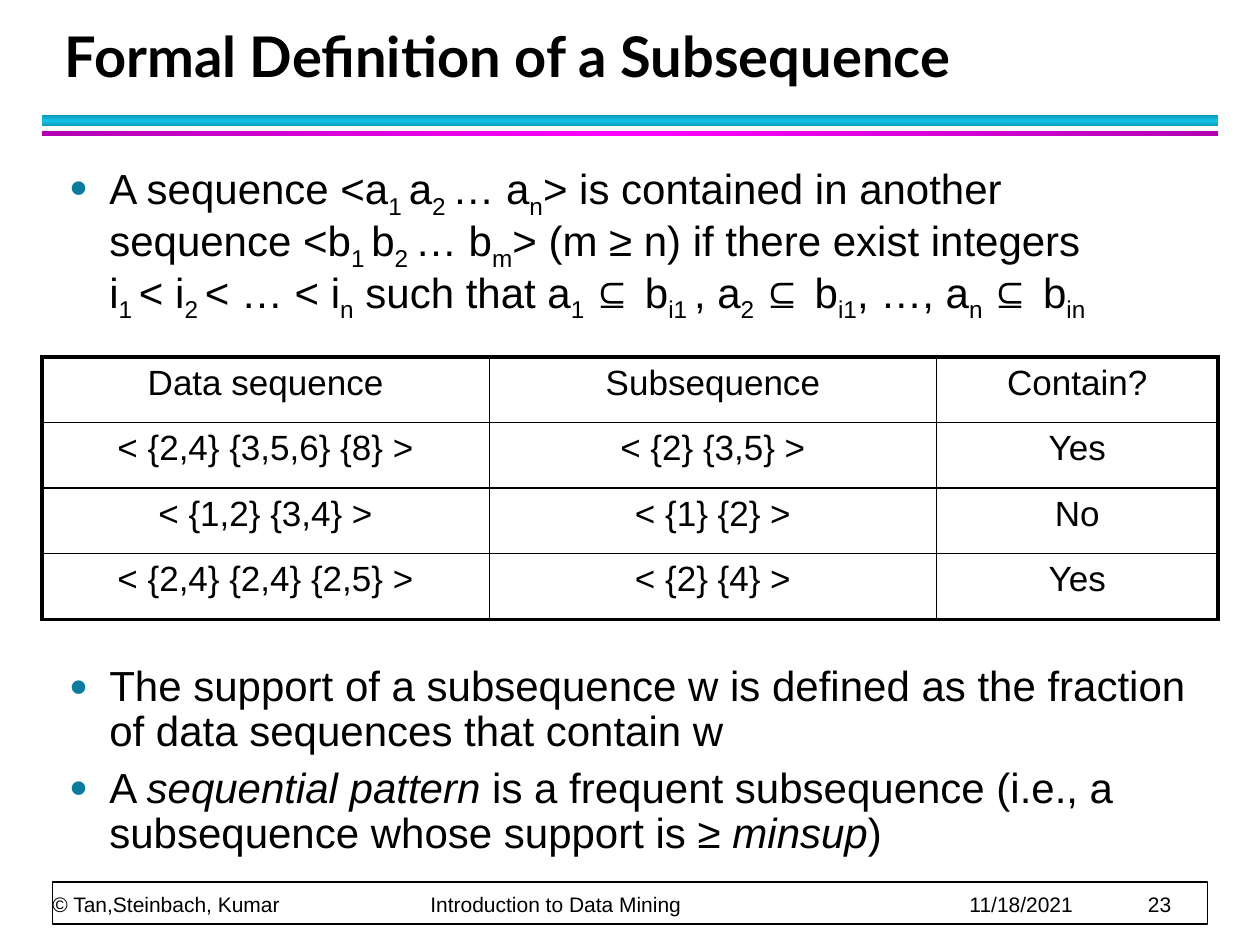
"""Build the slide on the formal definition of a subsequence."""
from copy import deepcopy
from dataclasses import dataclass

from lxml.etree import SubElement
from pptx import Presentation
from pptx.dml.color import RGBColor
from pptx.enum.shapes import MSO_SHAPE
from pptx.enum.text import MSO_ANCHOR, PP_ALIGN
from pptx.oxml.ns import qn
from pptx.util import Pt

BLACK = RGBColor(0, 0, 0)
WHITE = RGBColor(255, 255, 255)
BULLET_TEAL = RGBColor(0x0C, 0x7B, 0x9C)
CYAN_DARK = RGBColor(0x0E, 0x9B, 0xBA)
CYAN = RGBColor(0x12, 0xC2, 0xE9)
MAGENTA_DARK = RGBColor(0xB2, 0, 0xB2)
MAGENTA = RGBColor(255, 0, 255)

THIN, THICK = Pt(1), Pt(2.25)


@dataclass(frozen=True)
class Box:
    left: float
    top: float
    width: float
    height: float

    def lengths(self) -> tuple:
        return Pt(self.left), Pt(self.top), Pt(self.width), Pt(self.height)


@dataclass(frozen=True)
class Rule:
    box: Box
    edge: RGBColor
    middle: RGBColor
    angle: int


@dataclass(frozen=True)
class Span:
    text: str
    italic: bool = False
    subscript: bool = False


RULES = (
    Rule(Box(24, 66, 672, 6), CYAN_DARK, CYAN, 90),
    Rule(Box(24, 75, 672, 3), MAGENTA_DARK, MAGENTA, 0),
)
CONTAINMENT = (
    "A sequence <a", "1 ", "a", "2 ", "… a", "n",
    "> is contained in another sequence <b", "1 ", "b", "2 ", "… b", "m",
    "> (m ≥ n) if there exist integers \ni", "1 ", "< i", "2 ", "< … < i", "n",
    " such that a", "1 ", "⊆ b", "i1 ", ", a", "2 ", "⊆ b", "i1",
    ", …, a", "n ", "⊆ b", "in",
)
DEFINITION = [Span(text, subscript=i % 2 == 1) for i, text in enumerate(CONTAINMENT)]
SUPPORT = [Span("The support of a subsequence w is defined as the fraction "
                "of data sequences that contain w")]
PATTERN = [
    Span("A "),
    Span("sequential pattern", italic=True),
    Span(" is a frequent subsequence (i.e., a subsequence whose support is ≥ "),
    Span("minsup", italic=True),
    Span(")"),
]
EXAMPLES = (
    ("Data sequence", "Subsequence", "Contain?"),
    ("< {2,4} {3,5,6} {8} >", "< {2} {3,5} >", "Yes"),
    ("< {1,2} {3,4} >", "< {1} {2} >", "No"),
    ("< {2,4} {2,4} {2,5} >", "< {2} {4} >", "Yes"),
)
COLUMN_WIDTHS = (255.6, 255.6, 160.8)
FOOTER = "© Tan,Steinbach, Kumar\tIntroduction to Data Mining\t11/18/2021\t23"
FOOTER_TABS = (216, 524, 626)


def add_run(paragraph, span: Span, size: float, font: str = "Arial", bold: bool = False) -> None:
    run = paragraph.add_run()
    run.text = span.text
    run.font.name, run.font.size = font, Pt(size)
    run.font.bold, run.font.italic = bold, span.italic
    run.font.color.rgb = BLACK
    if span.subscript:
        run.font._element.set("baseline", "-25000")


def add_text_frame(slide, box: Box, anchor: MSO_ANCHOR, inset: bool = True):
    frame = slide.shapes.add_textbox(*box.lengths()).text_frame
    frame.word_wrap, frame.vertical_anchor = True, anchor
    if not inset:
        frame.margin_left = frame.margin_right = frame.margin_top = frame.margin_bottom = 0
    return frame


def add_rule(slide, rule: Rule) -> None:
    bar = slide.shapes.add_shape(MSO_SHAPE.RECTANGLE, *rule.box.lengths())
    bar.shadow.inherit = False
    bar.line.fill.background()
    bar.fill.gradient()
    bar.fill.gradient_angle = rule.angle
    first = bar.fill._xPr.find(".//" + qn("a:gs"))
    first.addnext(deepcopy(first))
    colors = (rule.edge, rule.middle, rule.edge)
    for stop, position, color in zip(bar.fill.gradient_stops, (0, 0.5, 1), colors):
        stop.position, stop.color.rgb = position, color


def add_bullets(slide, box: Box, items: list[list[Span]]) -> None:
    frame = add_text_frame(slide, box, MSO_ANCHOR.TOP)
    for index, spans in enumerate(items):
        paragraph = frame.add_paragraph() if index else frame.paragraphs[0]
        paragraph.line_spacing = 0.9
        paragraph.space_before, paragraph.space_after = Pt(2.4), Pt(4)
        properties = paragraph._p.get_or_add_pPr()
        properties.set("marL", str(Pt(23)))
        properties.set("indent", str(-Pt(23)))
        color = SubElement(properties, qn("a:buClr"))
        SubElement(color, qn("a:srgbClr"), val=str(BULLET_TEAL))
        SubElement(properties, qn("a:buSzPct"), val="75000")
        SubElement(properties, qn("a:buFont"), typeface="Arial")
        SubElement(properties, qn("a:buChar"), char="●")
        for span in spans:
            for row, piece in enumerate(span.text.split("\n")):
                if row:
                    paragraph.add_line_break()
                add_run(paragraph, Span(piece, span.italic, span.subscript), 24)


def set_borders(cell, widths: dict[str, int]) -> None:
    properties = cell._tc.get_or_add_tcPr()
    for index, (side, width) in enumerate(widths.items()):
        line = SubElement(properties, qn(f"a:ln{side}"), w=str(width))
        fill = SubElement(line, qn("a:solidFill"))
        SubElement(fill, qn("a:srgbClr"), val=str(BLACK))
        properties.insert(index, line)


def add_examples(slide, box: Box) -> None:
    last_row, last_column = len(EXAMPLES) - 1, len(COLUMN_WIDTHS) - 1
    table = slide.shapes.add_table(last_row + 1, last_column + 1, *box.lengths()).table
    table.first_row = table.horz_banding = False
    for column, width in zip(table.columns, COLUMN_WIDTHS):
        column.width = Pt(width)
    for r, example in enumerate(EXAMPLES):
        for c, text in enumerate(example):
            cell = table.cell(r, c)
            cell.fill.background()
            set_borders(cell, {
                "L": THICK if c == 0 else THIN,
                "R": THICK if c == last_column else THIN,
                "T": THICK if r == 0 else THIN,
                "B": THICK if r == last_row else THIN,
            })
            paragraph = cell.text_frame.paragraphs[0]
            paragraph.alignment = PP_ALIGN.CENTER
            paragraph.space_before, paragraph.space_after = Pt(2), Pt(4)
            add_run(paragraph, Span(text), 20)


def add_title(slide) -> None:
    frame = add_text_frame(slide, Box(30, 12, 652, 42), MSO_ANCHOR.BOTTOM)
    frame.paragraphs[0].line_spacing = Pt(36)
    add_run(frame.paragraphs[0], Span("Formal Definition of a Subsequence"), 32, "Lato", True)


def add_footer(slide) -> None:
    border = slide.shapes.add_shape(MSO_SHAPE.RECTANGLE, *Box(30, 504, 660, 24).lengths())
    border.shadow.inherit = False
    border.fill.solid()
    border.fill.fore_color.rgb = WHITE
    border.line.color.rgb, border.line.width = BLACK, THIN
    frame = add_text_frame(slide, Box(30, 506, 659, 18), MSO_ANCHOR.BOTTOM, inset=False)
    paragraph = frame.paragraphs[0]
    paragraph.line_spacing = Pt(20)
    tabs = SubElement(paragraph._p.get_or_add_pPr(), qn("a:tabLst"))
    for position in FOOTER_TABS:
        SubElement(tabs, qn("a:tab"), pos=str(Pt(position)), algn="l")
    add_run(paragraph, Span(FOOTER), 12)


def main() -> None:
    presentation = Presentation()
    presentation.slide_width, presentation.slide_height = Pt(720), Pt(540)
    slide = presentation.slides.add_slide(presentation.slide_layouts[6])
    for rule in RULES:
        add_rule(slide, rule)
    add_footer(slide)
    add_title(slide)
    add_bullets(slide, Box(32.4, 90, 655, 105), [DEFINITION])
    add_examples(slide, Box(24, 204, 672, 150))
    add_bullets(slide, Box(32.4, 376.5, 655, 122), [SUPPORT, PATTERN])
    presentation.save("out.pptx")


if __name__ == "__main__":
    main()
